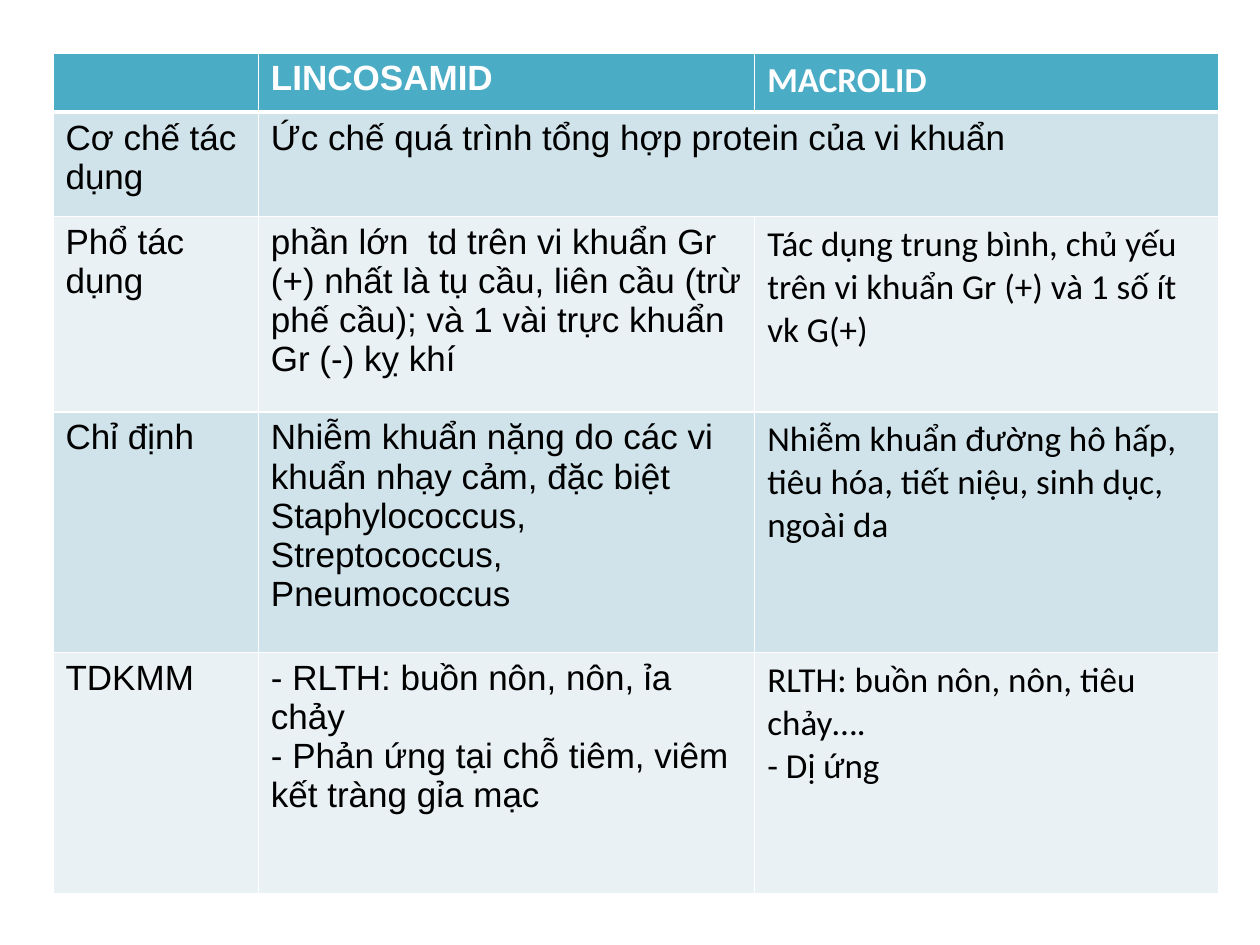
from lxml.etree import SubElement
from pptx import Presentation
from pptx.dml.color import RGBColor
from pptx.oxml.ns import qn
from pptx.util import Inches, Pt

COLORS = {"header": "4BACC6", "odd": "D0E3EA", "even": "E9F1F5",
          "white": "FFFFFF", "text": "000000"}
COL_WIDTHS = [1.63, 3.94, 3.68]
ROW_HEIGHTS = [0.47, 0.83, 1.55, 1.91, 1.91]
COL_FONTS = ["Arial", "Arial", "Calibri"]

# Each line of a cell is a paragraph
ROWS = [
    ["", "LINCOSAMID", "MACROLID"],
    ["Cơ chế tác dụng", "Ức chế quá trình tổng hợp protein của vi khuẩn", ""],
    ["Phổ tác dụng",
     "phần lớn  td trên vi khuẩn Gr (+) nhất là tụ cầu, liên cầu "
     "(trừ phế cầu); và 1 vài trực khuẩn Gr (-) kỵ khí",
     "Tác dụng trung bình, chủ yếu trên vi khuẩn Gr (+) và 1 số ít vk G(+)"],
    ["Chỉ định",
     "Nhiễm khuẩn nặng do các vi khuẩn nhạy cảm, đặc biệt "
     "Staphylococcus, Streptococcus, Pneumococcus",
     "Nhiễm khuẩn đường hô hấp, tiêu hóa, tiết niệu, sinh dục, ngoài da"],
    ["TDKMM",
     "- RLTH: buồn nôn, nôn, ỉa chảy\n"
     "- Phản ứng tại chỗ tiêm, viêm kết tràng gỉa mạc",
     "RLTH: buồn nôn, nôn, tiêu chảy….\n- Dị ứng"],
]


def write_text(tf, text, font="Arial", size=20, color="text", bold=False):
    for i, line in enumerate(text.split("\n")):
        p = tf.paragraphs[0] if i == 0 else tf.add_paragraph()
        p.font.size = Pt(size)
        if not line:
            continue
        r = p.add_run()
        r.text = line
        r.font.name = font
        r.font.size = Pt(size)
        r.font.bold = bold
        r.font.color.rgb = RGBColor.from_string(COLORS[color])


def set_borders(cell, top=1, bottom=1):
    tc_pr = cell._tc.get_or_add_tcPr()
    for tag, width in (("lnL", 1), ("lnR", 1), ("lnT", top), ("lnB", bottom)):
        ln = SubElement(tc_pr, qn(f"a:{tag}"), w=str(Pt(width)))
        fill = SubElement(ln, qn("a:solidFill"))
        SubElement(fill, qn("a:srgbClr"), val=COLORS["white"])


def add_comparison_table(s, left, top, width, height):
    table = s.shapes.add_table(len(ROWS), len(COL_WIDTHS), left, top,
                               width, height).table
    for col, w in zip(table.columns, COL_WIDTHS):
        col.width = Inches(w)
    for row, h in zip(table.rows, ROW_HEIGHTS):
        row.height = Inches(h)

    for i, texts in enumerate(ROWS):
        header = i == 0
        band = "header" if header else "odd" if i % 2 else "even"
        for j, text in enumerate(texts):
            cell = table.cell(i, j)
            # Borders precede the fill in the cell properties
            set_borders(cell, top=3 if i == 1 else 1, bottom=3 if header else 1)
            cell.fill.solid()
            cell.fill.fore_color.rgb = RGBColor.from_string(COLORS[band])
            write_text(cell.text_frame, text, font=COL_FONTS[j], bold=header,
                       color="white" if header else "text")

    # The mechanism of action is shared by both drug groups
    table.cell(1, 1).merge(table.cell(1, 2))


def main():
    prs = Presentation()
    prs.slide_width, prs.slide_height = Inches(10), Inches(7.5)
    s = prs.slides.add_slide(prs.slide_layouts[6])
    add_comparison_table(s, Inches(0.42), Inches(0.42),
                         Inches(sum(COL_WIDTHS)), Inches(sum(ROW_HEIGHTS)))
    prs.save("out.pptx")


if __name__ == "__main__":
    main()
